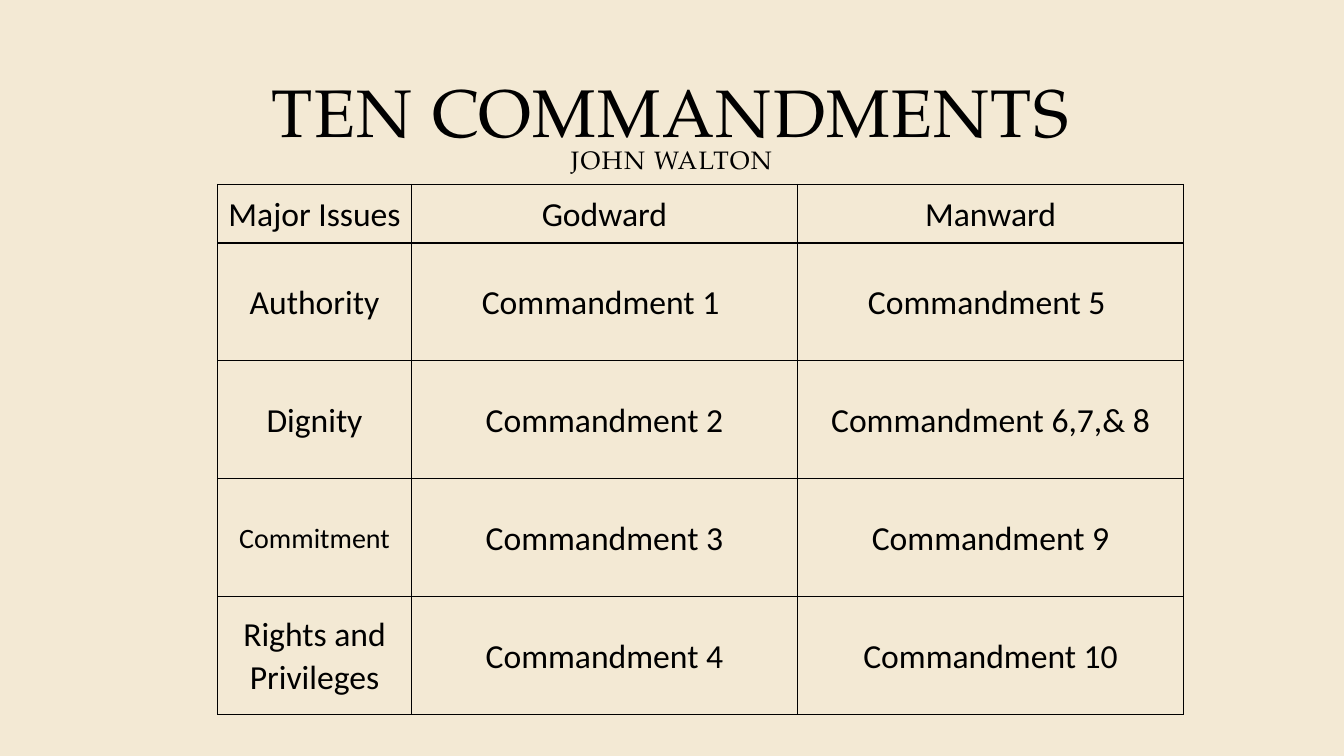
from lxml import etree
from pptx import Presentation
from pptx.dml.color import RGBColor
from pptx.enum import text
from pptx.oxml import ns
from pptx.util import Inches, Pt

CREAM = RGBColor(0xF3, 0xE9, 0xD4)
BLACK = RGBColor(0, 0, 0)
TITLE_FONT = "TeX Gyre Pagella"
TABLE_FONT = "Calibri"

COLUMN_WIDTHS = [1.92, 3.83, 3.83]
ROW_HEIGHTS = [0.58] + [1.17] * 4
ISSUES = [
    ["Major Issues", "Godward", "Manward"],
    ["Authority", "Commandment 1 ", "Commandment 5 "],
    ["Dignity", "Commandment 2", "Commandment 6,7,& 8"],
    ["Commitment", "Commandment 3", "Commandment 9"],
    ["Rights and Privileges", "Commandment 4", "Commandment 10"],
]


def add_title(slide, title, author):
    box = slide.shapes.add_textbox(Inches(1.33), Inches(0.7), Inches(10.66), Inches(1.78))
    frame = box.text_frame
    frame.word_wrap = True
    frame.vertical_anchor = text.MSO_ANCHOR.TOP
    frame.margin_top = Inches(0.15)
    paragraph = frame.paragraphs[0]
    paragraph.alignment = text.PP_ALIGN.CENTER
    paragraph.line_spacing = 0.8
    paragraph.font.name = TITLE_FONT
    paragraph.font.color.rgb = BLACK
    for words, size in ((title, 48), (author, 18)):
        if paragraph.runs:
            paragraph.add_line_break()
        run = paragraph.add_run()
        run.text = words
        run.font.size = Pt(size)
        run._r.get_or_add_rPr().set("spc", "100")


def add_borders(cell):
    properties = cell._tc.get_or_add_tcPr()
    for index, side in enumerate(("a:lnL", "a:lnR", "a:lnT", "a:lnB")):
        line = etree.Element(ns.qn(side), w=str(Pt(1)))
        fill = etree.SubElement(line, ns.qn("a:solidFill"))
        etree.SubElement(fill, ns.qn("a:srgbClr"), val=str(BLACK))
        properties.insert(index, line)


def fill_cell(cell, words):
    cell.text = words
    cell.fill.background()
    cell.vertical_anchor = text.MSO_ANCHOR.MIDDLE
    cell.margin_left = cell.margin_right = Inches(0.07)
    cell.margin_top = cell.margin_bottom = 0
    paragraph = cell.text_frame.paragraphs[0]
    paragraph.alignment = text.PP_ALIGN.CENTER
    paragraph.line_spacing = 1.06
    paragraph.font.name = TABLE_FONT
    paragraph.font.size = Pt(20 if words == "Commitment" else 24)
    paragraph.font.color.rgb = BLACK
    add_borders(cell)


def add_issue_table(slide):
    frame = slide.shapes.add_table(
        len(ISSUES), len(COLUMN_WIDTHS), Inches(2.16), Inches(1.83),
        Inches(sum(COLUMN_WIDTHS)), Inches(sum(ROW_HEIGHTS)),
    )
    table = frame.table
    table.first_row = table.horz_banding = False
    for column, width in zip(table.columns, COLUMN_WIDTHS):
        column.width = Inches(width)
    for row, height, issue in zip(table.rows, ROW_HEIGHTS, ISSUES):
        row.height = Inches(height)
        for cell, words in zip(row.cells, issue):
            fill_cell(cell, words)


def main():
    presentation = Presentation()
    presentation.slide_width = Inches(13.33)
    presentation.slide_height = Inches(7.5)
    slide = presentation.slides.add_slide(presentation.slide_layouts[6])
    slide.background.fill.solid()
    slide.background.fill.fore_color.rgb = CREAM
    add_issue_table(slide)
    add_title(slide, "TEN COMMANDMENTS", "JOHN WALTON")
    presentation.save("out.pptx")


if __name__ == "__main__":
    main()
